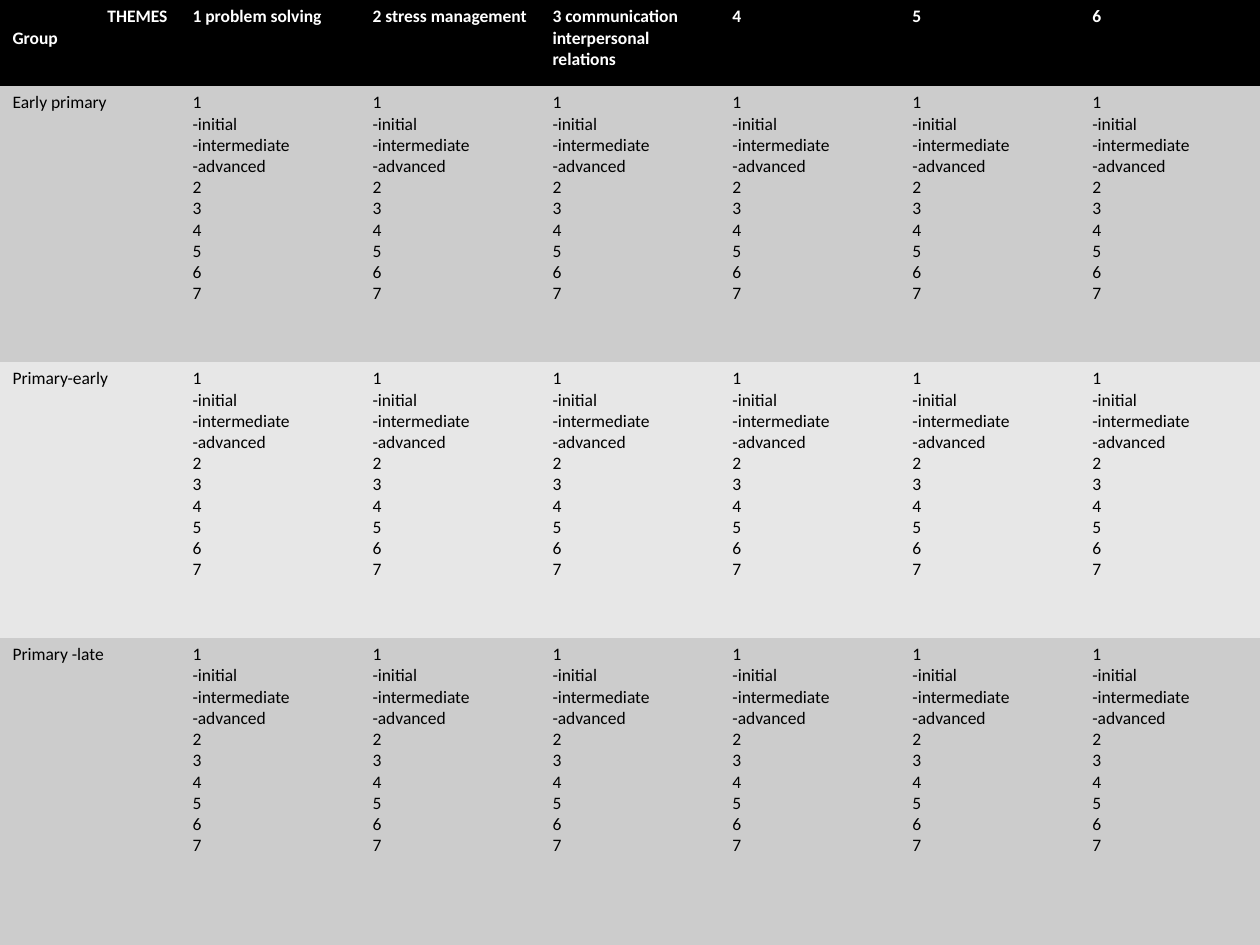
import pptx
import pptx.util
import pptx.dml.color
import pptx.enum.text
import pptx.oxml.ns

PX = 914400 // 126
COLORS = {
    "header": "000000",
    "odd_band": "CCCCCC",
    "even_band": "E7E7E7",
    "header_text": "FFFFFF",
    "body_text": "000000",
}
NO_GRID_STYLE = "{2D5ABB26-0587-4C30-8999-92F81FD0307C}"

CORNER = ["THEMES", "Group"]
THEMES = [
    "1 problem solving",
    "2 stress management",
    "3 communication interpersonal relations",
    "4",
    "5",
    "6",
]
GROUPS = ["Early primary", "Primary-early", "Primary -late"]
LEVELS = ["1", "-initial", "-intermediate", "-advanced", "2", "3", "4", "5", "6", "7"]

COLUMN_WIDTH = 180
ROW_HEIGHTS = [86, 276, 276, 307]


def px(length):
    return pptx.util.Emu(length * PX)


def rgb(role):
    return pptx.dml.color.RGBColor.from_string(COLORS[role])


def fill_cell(cell, lines, background, text_color, bold):
    cell.fill.solid()
    cell.fill.fore_color.rgb = rgb(background)
    cell.text = "\n".join(lines)
    for paragraph in cell.text_frame.paragraphs:
        paragraph.font.name = "Calibri"
        paragraph.font.size = pptx.util.Pt(10)
        paragraph.font.bold = bold
        paragraph.font.color.rgb = rgb(text_color)


def main():
    rows = [[CORNER] + [[theme] for theme in THEMES]]
    rows += [[[group]] + [LEVELS] * len(THEMES) for group in GROUPS]
    width = COLUMN_WIDTH * len(rows[0])
    height = sum(ROW_HEIGHTS)

    deck = pptx.Presentation()
    deck.slide_width = pptx.util.Inches(10)
    deck.slide_height = pptx.util.Inches(7.5)
    slide = deck.slides.add_slide(deck.slide_layouts[6])

    frame = slide.shapes.add_table(len(rows), len(rows[0]), 0, 0, px(width), px(height))
    plan = frame.table
    style = frame._element.find(".//" + pptx.oxml.ns.qn("a:tableStyleId"))
    style.text = NO_GRID_STYLE

    for column in plan.columns:
        column.width = px(COLUMN_WIDTH)
    for r, row in enumerate(rows):
        plan.rows[r].height = px(ROW_HEIGHTS[r])
        is_header = r == 0
        band = "header" if is_header else "odd_band" if r % 2 else "even_band"
        text_color = "header_text" if is_header else "body_text"
        for c, lines in enumerate(row):
            fill_cell(plan.cell(r, c), lines, band, text_color, is_header)

    themes_label = plan.cell(0, 0).text_frame.paragraphs[0]
    themes_label.alignment = pptx.enum.text.PP_ALIGN.RIGHT
    deck.save("out.pptx")


if __name__ == "__main__":
    main()
